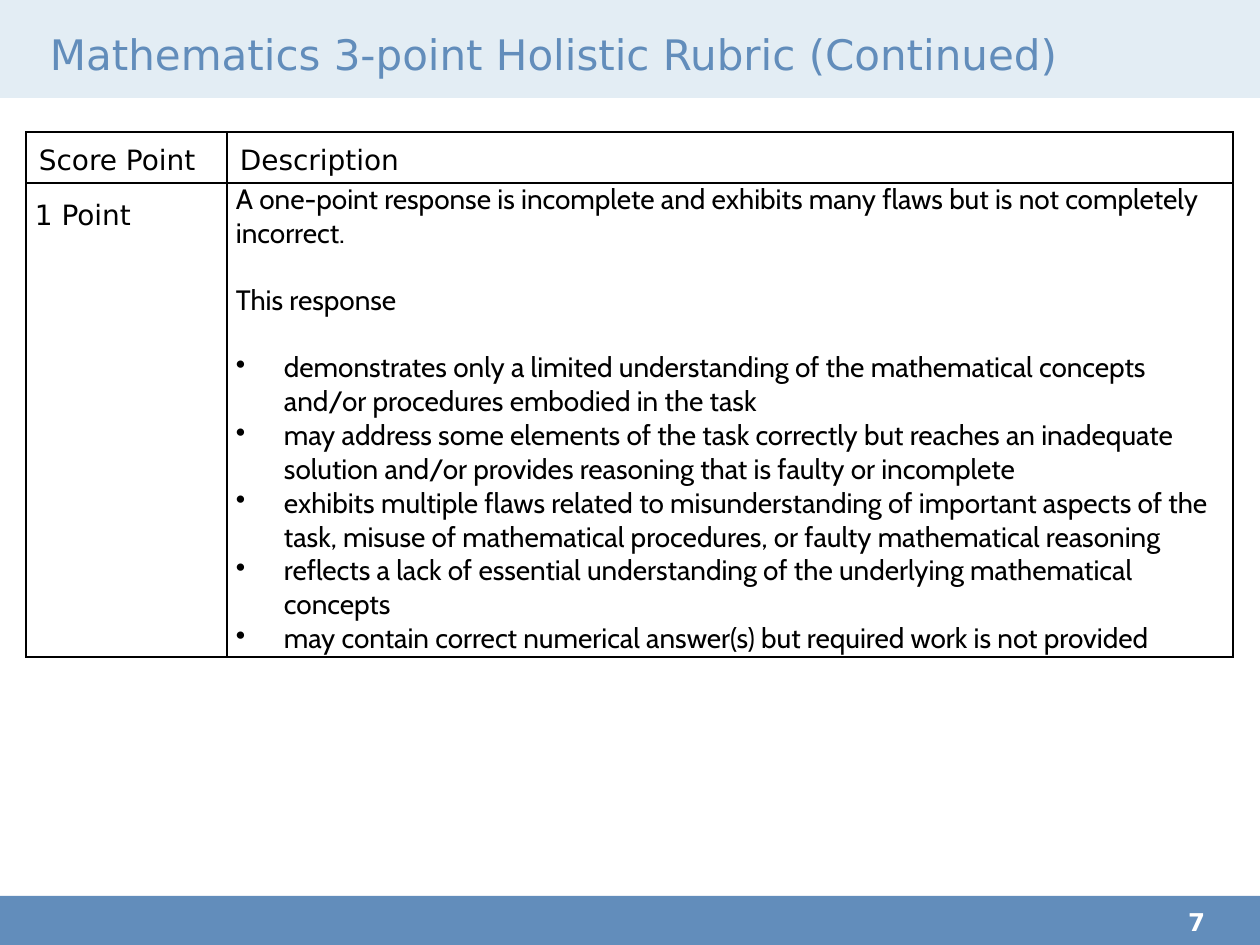
from dataclasses import dataclass

from lxml import etree
from pptx import Presentation
from pptx.dml.color import RGBColor
from pptx.enum.shapes import MSO_SHAPE
from pptx.enum.text import MSO_ANCHOR
from pptx.oxml.ns import qn
from pptx.util import Emu, Pt

RECTANGLE = MSO_SHAPE.RECTANGLE
TOP, BOTTOM = MSO_ANCHOR.TOP, MSO_ANCHOR.BOTTOM
EMU_PER_PX = 914400 / 126


@dataclass(frozen=True)
class Theme:
    accent: str = "628DBB"
    pale: str = "E3EDF4"
    white: str = "FFFFFF"
    black: str = "000000"
    heading_font: str = "DejaVu Sans"
    body_font: str = "Cabin"
    title_size: int = 24
    body_size: int = 16
    number_size: int = 14
    blank_line: int = 19
    border_width: int = 1


THEME = Theme()


@dataclass(frozen=True)
class Area:
    left: int
    top: int
    width: int
    height: int


@dataclass(frozen=True)
class Band:
    area: Area
    color: str


@dataclass(frozen=True)
class Style:
    size: int
    color: str
    font: str = THEME.heading_font
    bold: bool = False


@dataclass(frozen=True)
class Label:
    area: Area
    text: str
    style: Style
    margins: tuple[int, int, int, int] = (0, 0, 0, 0)


@dataclass(frozen=True)
class Line:
    text: str
    space_before: int = 0
    spacing: float = 1.0
    bullet: bool = False


@dataclass(frozen=True)
class RubricCell:
    lines: list[Line]
    style: Style
    margins: tuple[int, int, int, int]
    anchor: MSO_ANCHOR


def px(value: int) -> Emu:
    return Emu(round(value * EMU_PER_PX))


def place(area: Area) -> tuple[Emu, Emu, Emu, Emu]:
    return px(area.left), px(area.top), px(area.width), px(area.height)


def set_margins(target, margins: tuple[int, int, int, int]) -> None:
    target.margin_left, target.margin_top, target.margin_right, target.margin_bottom = map(px, margins)


def add_span(para, text: str, style: Style) -> None:
    span = para.add_run()
    span.text = text
    span.font.name = style.font
    span.font.size = Pt(style.size)
    span.font.bold = style.bold
    span.font.color.rgb = RGBColor.from_string(style.color)


def draw_band(page, band: Band) -> None:
    box = page.shapes.add_shape(RECTANGLE, *place(band.area))
    box.shadow.inherit = False
    box.fill.solid()
    box.fill.fore_color.rgb = RGBColor.from_string(band.color)
    box.line.fill.background()


def draw_label(page, label: Label) -> None:
    frame = page.shapes.add_textbox(*place(label.area)).text_frame
    frame.word_wrap = True
    frame.vertical_anchor = TOP
    set_margins(frame, label.margins)
    add_span(frame.paragraphs[0], label.text, label.style)


def add_bullet(para) -> None:
    properties = para._p.get_or_add_pPr()
    properties.set("marL", str(px(48)))
    properties.set("indent", str(px(-48)))
    etree.SubElement(properties, qn("a:buChar"), char="•")
    tabs = etree.SubElement(properties, qn("a:tabLst"))
    etree.SubElement(tabs, qn("a:tab"), pos=str(px(63)), algn="l")


def add_borders(cell) -> None:
    properties = cell._tc.get_or_add_tcPr()
    for index, side in enumerate(("lnL", "lnR", "lnT", "lnB")):
        border = etree.Element(qn(f"a:{side}"), w=str(Pt(THEME.border_width)))
        fill = etree.SubElement(border, qn("a:solidFill"))
        etree.SubElement(fill, qn("a:srgbClr"), val=THEME.black)
        properties.insert(index, border)


def fill_cell(cell, content: RubricCell) -> None:
    set_margins(cell, content.margins)
    cell.vertical_anchor = content.anchor
    cell.fill.background()
    add_borders(cell)
    frame = cell.text_frame
    for index, line in enumerate(content.lines):
        para = frame.add_paragraph() if index else frame.paragraphs[0]
        para.line_spacing = line.spacing
        para.space_before = Pt(line.space_before)
        if line.bullet:
            add_bullet(para)
        add_span(para, line.text, content.style)


def draw_table(page, area: Area, widths: list[int], heights: list[int],
               rows: list[list[RubricCell]]) -> None:
    table = page.shapes.add_table(len(rows), len(widths), *place(area)).table
    table.first_row = False
    table.horz_banding = False
    for column, width in zip(table.columns, widths):
        column.width = px(width)
    for row, height, contents in zip(table.rows, heights, rows):
        row.height = px(height)
        for cell, content in zip(row.cells, contents):
            fill_cell(cell, content)


HEADING = Style(THEME.body_size, THEME.black)
BODY = Style(THEME.body_size, THEME.black, THEME.body_font)
HEADER_MARGINS = (13, 6, 13, 6)
BODY_MARGINS = (9, 0, 9, 0)

BANDS = [
    Band(Area(0, 896, 1260, 49), THEME.accent),
    Band(Area(0, 0, 1260, 98), THEME.pale),
]
LABELS = [
    Label(Area(50, 29, 1134, 62), "Mathematics 3-point Holistic Rubric (Continued)",
          Style(THEME.title_size, THEME.accent), (0, 0, 13, 6)),
    Label(Area(1188, 907, 72, 38), "7", Style(THEME.number_size, THEME.white, bold=True)),
]
TRAITS = [
    "demonstrates only a limited understanding of the mathematical concepts and/or procedures embodied in the task",
    "may address some elements of the task correctly but reaches an inadequate solution and/or provides "
    "reasoning that is faulty or incomplete",
    "exhibits multiple flaws related to misunderstanding of important aspects of the task, misuse of "
    "mathematical procedures, or faulty mathematical reasoning",
    "reflects a lack of essential understanding of the underlying mathematical concepts",
    "may contain correct numerical answer(s) but required work is not provided",
]
DESCRIPTION = [
    Line("A one-point response is incomplete and exhibits many flaws but is not completely incorrect."),
    Line("This response", THEME.blank_line),
    *(Line(trait, 0 if index else THEME.blank_line, bullet=True) for index, trait in enumerate(TRAITS)),
]
RUBRIC = [
    [RubricCell([Line(text)], HEADING, HEADER_MARGINS, BOTTOM) for text in ("Score Point", "Description")],
    [RubricCell([Line("1 Point", spacing=1.5)], HEADING, BODY_MARGINS, TOP),
     RubricCell(DESCRIPTION, BODY, BODY_MARGINS, TOP)],
]


def main() -> None:
    deck = Presentation()
    deck.slide_width, deck.slide_height = px(1260), px(945)
    page = deck.slides.add_slide(deck.slide_layouts[6])
    for band in BANDS:
        draw_band(page, band)
    draw_table(page, Area(26, 132, 1207, 525), [201, 1006], [51, 474], RUBRIC)
    for label in LABELS:
        draw_label(page, label)
    deck.save("out.pptx")


if __name__ == "__main__":
    main()
